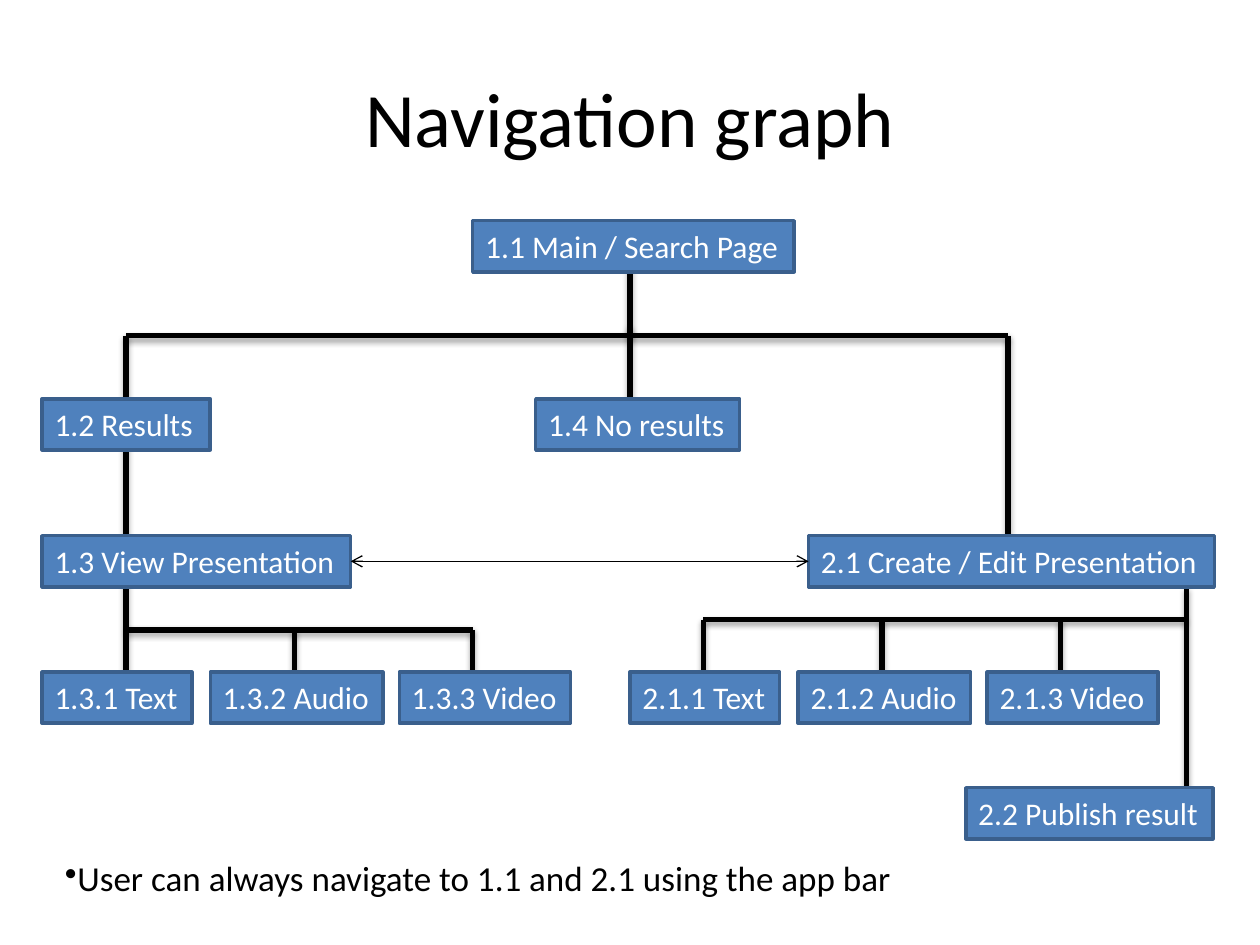
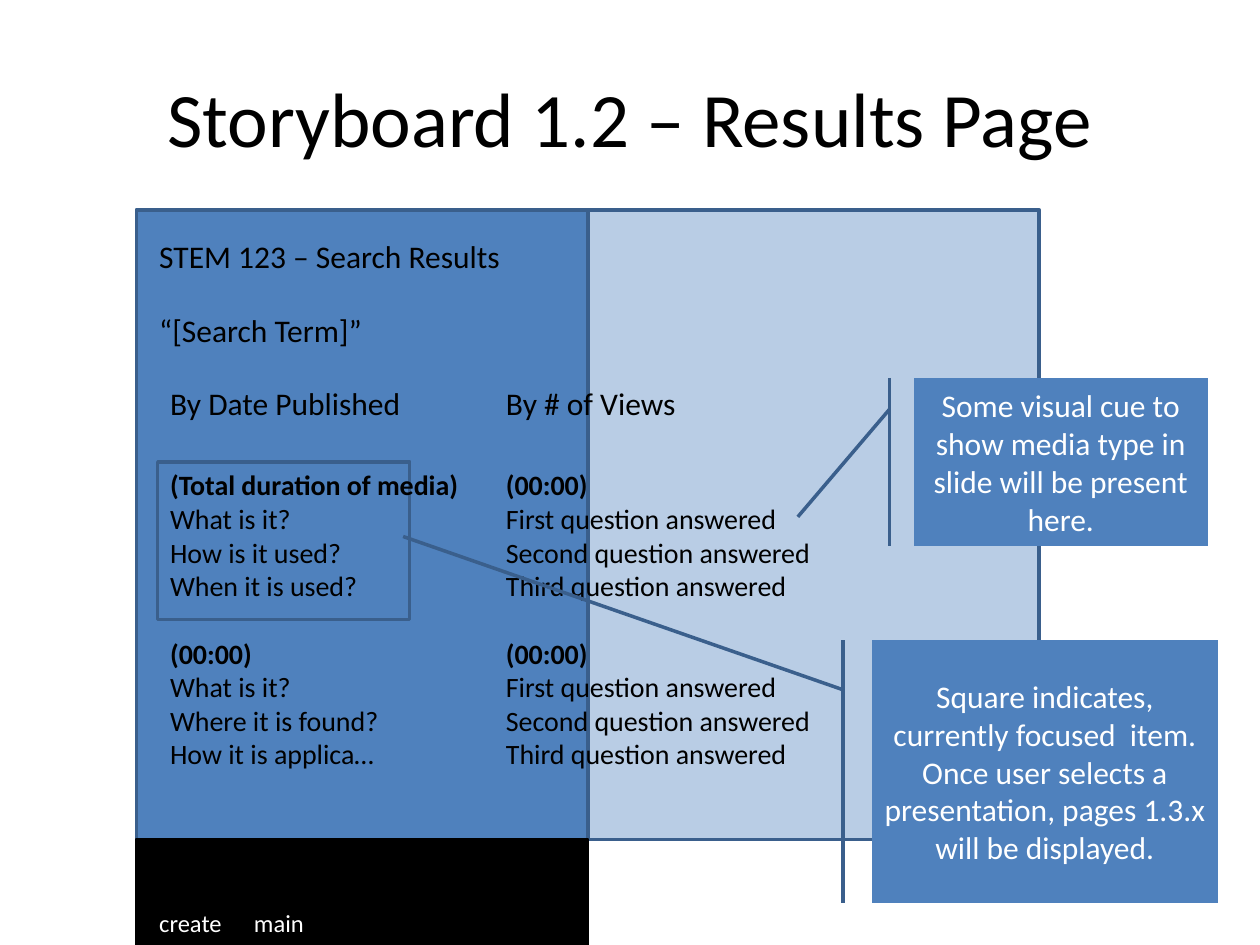
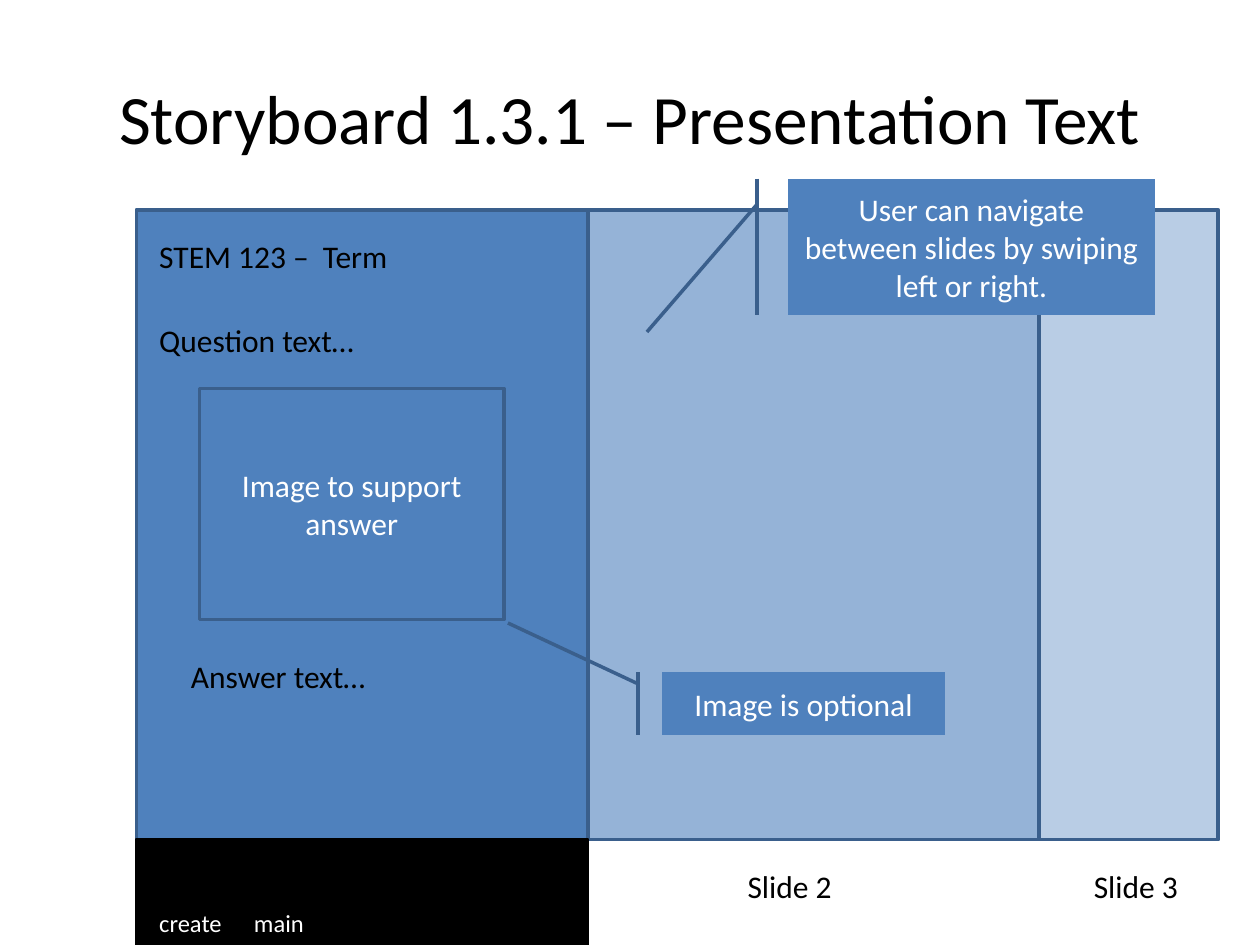
from lxml import etree
from pptx import Presentation
from pptx.dml.color import RGBColor
from pptx.enum.shapes import MSO_CONNECTOR, MSO_SHAPE
from pptx.enum.text import MSO_ANCHOR, PP_ALIGN
from pptx.oxml.ns import qn
from pptx.util import Cm, Pt

RECT = MSO_SHAPE.RECTANGLE
CALL = MSO_SHAPE.LINE_CALLOUT_1_ACCENT_BAR
LINE = MSO_CONNECTOR.STRAIGHT
LEFT, MID = PP_ALIGN.LEFT, PP_ALIGN.CENTER
TOP, HALF = MSO_ANCHOR.TOP, MSO_ANCHOR.MIDDLE

BLACK = RGBColor(0x00, 0x00, 0x00)
WHITE = RGBColor(0xFF, 0xFF, 0xFF)
BLUE = RGBColor(0x4F, 0x81, 0xBD)
EDGE = RGBColor(0x3A, 0x5F, 0x8C)
SOFT = RGBColor(0x95, 0xB3, 0xD7)
PALE = RGBColor(0xB9, 0xCD, 0xE5)
FONT = "Calibri"
ROW = 1.03  # height of a one-line label


def write(shape, text, size=18, ink=BLACK, align=LEFT, anchor=TOP, wrap=True):
    """Fill a shape with lines; the first of several lines is bold."""
    frame = shape.text_frame
    frame.word_wrap = wrap
    frame.vertical_anchor = anchor
    lines = text.split("\n")
    for i, line in enumerate(lines):
        para = frame.paragraphs[0] if i == 0 else frame.add_paragraph()
        para.text = line
        para.alignment = align
        para.font.name = FONT
        para.font.size = Pt(size)
        para.font.bold = len(lines) > 1 and i == 0
        para.font.color.rgb = ink


def draw(slide, place, fill=BLUE, edge=EDGE, kind=RECT):
    """Add a preset shape at (left, top, width, height) in cm."""
    shape = slide.shapes.add_shape(kind, *map(Cm, place))
    shape.shadow.inherit = False
    if fill is None:
        shape.fill.background()
    else:
        shape.fill.solid()
        shape.fill.fore_color.rgb = fill
    shape.line.color.rgb = edge
    shape.line.width = Pt(2)
    return shape


deck = Presentation()
deck.slide_width, deck.slide_height = Cm(25.4), Cm(19.05)

# Slides and titles
pages = []
for title, size in [("Navigation graph", 44),
                    ("Storyboard 1.2 – Results Page", 44),
                    ("Storyboard 1.3.1 – Presentation Text", 39.6)]:
    page = deck.slides.add_slide(deck.slide_layouts[6])
    head = page.shapes.add_textbox(Cm(1.27), Cm(0.76), Cm(22.86), Cm(3.18))
    write(head, title, size, align=MID, anchor=HALF)
    pages.append(page)
graph, *boards = pages

# Graph: thick branches with a soft shadow
branches = [
    (2.54, 8.68, 2.54, 11.22), (20.32, 6.77, 20.32, 11.01),
    (12.7, 6.56, 12.7, 8.04), (2.54, 6.77, 2.54, 8.26),
    (12.7, 5.08, 12.7, 6.77), (2.54, 6.77, 20.32, 6.77),
    (2.54, 12.7, 9.53, 12.7), (2.54, 11.43, 2.54, 13.97),
    (14.18, 12.49, 23.92, 12.49), (23.92, 11.85, 23.92, 16.51),
]
branches += [(x, 12.7, x, 14.18) for x in (5.93, 9.53)]
branches += [(x, 12.49, x, 13.97) for x in (14.18, 17.78, 21.38)]
for ends in branches:
    branch = graph.shapes.add_connector(LINE, *map(Cm, ends))
    branch.line.color.rgb = BLACK
    branch.line.width = Pt(3)
    effect = etree.SubElement(branch._element.spPr, qn("a:effectLst"))
    shade = etree.SubElement(effect, qn("a:outerShdw"), blurRad="40000",
                             dist="23000", dir="5400000", rotWithShape="0")
    tone = etree.SubElement(shade, qn("a:srgbClr"), val="000000")
    etree.SubElement(tone, qn("a:alpha"), val="35000")

# Graph: page nodes, with the same media row under 1.3 and 2.1
nodes = [
    ("1.1 Main / Search Page", 9.53, 4.45, 6.48),
    ("1.2 Results", 0.85, 8.04, 3.39),
    ("1.4 No results", 10.8, 8.04, 4.11),
    ("1.3 View Presentation", 0.85, 10.8, 6.22),
    ("2.1 Create / Edit Presentation", 16.3, 10.8, 8.18),
    ("2.2 Publish result", 19.47, 15.88, 4.98),
]
for group, start in [("1.3", 0.85), ("2.1", 12.7)]:
    for name, step, w in [(".1 Text", 0, 3.02), (".2 Audio", 3.39, 3.48),
                          (".3 Video", 7.2, 3.45)]:
        nodes.append((group + name, start + step, 13.55, w))
made = {}
for text, x, y, w in nodes:
    node = draw(graph, (x, y, w, ROW))
    write(node, text, ink=WHITE, wrap=False)
    made[text[:3] if text[3] == " " else text[:5]] = node

# Graph: two-way arrow between viewing and editing
arrow = graph.shapes.add_connector(LINE, 0, 0, 0, 0)
arrow.begin_connect(made["1.3"], 3)
arrow.end_connect(made["2.1"], 1)
arrow.line.color.rgb = BLACK
arrow.line.width = Pt(0.75)
for tag in ("a:headEnd", "a:tailEnd"):
    etree.SubElement(arrow.line._get_or_add_ln(), qn(tag), type="arrow")
etree.SubElement(arrow._element.spPr, qn("a:effectLst"))

# Graph: bulleted remark
remark = graph.shapes.add_textbox(Cm(1.06), Cm(17.15), Cm(18.42), Cm(1.11))
write(remark, "User can always navigate to 1.1 and 2.1 using the app bar", 20)
bullet = etree.Element(qn("a:buChar"), char="•")
remark.text_frame.paragraphs[0]._p.get_or_add_pPr().insert(0, bullet)

# Storyboards: panels (left, width, fill) beside the first screen
panels = [
    [(11.85, 9.1, PALE)],
    [(11.85, 9.1, SOFT), (20.96, 3.6, PALE)],
]

# Storyboards: inner frames (text, place, fill)
frames = [
    [("", (3.18, 9.31, 5.08, 3.18), None)],
    [("Image to support answer", (4.02, 7.83, 6.14, 4.66), BLUE)],
]

# Storyboards: labels (text, left, top, width, wrap)
answers = ("(00:00)\nFirst question answered\nSecond question answered\n"
           "Third question answered")
labels = [
    [("STEM 123 – Search Results", 2.96, 4.66, 7.47, False),
     ("“[Search Term]”", 2.96, 6.14, 19.9, True),
     ("By Date Published", 3.18, 7.62, 5.21, False),
     ("By # of Views", 9.95, 7.62, 3.96, False),
     ("(Total duration of media)\nWhat is it?\nHow is it used?\n"
      "When it is used?", 3.18, 9.31, 6.4, False),
     ("(00:00)\nWhat is it?\nWhere it is found?\nHow it is applica…",
      3.18, 12.7, 4.78, False),
     (answers, 9.95, 9.31, 6.73, False),
     (answers, 9.95, 12.7, 6.73, False)],
    [("STEM 123 –  Term", 2.96, 4.66, 5.16, False),
     ("Question text…", 2.96, 6.35, 8.26, True),
     ("Answer text…", 3.6, 13.12, 4.09, False),
     ("Slide 2", 14.82, 17.36, 2.24, False),
     ("Slide 3", 21.8, 17.36, 2.24, False)],
]

# Storyboards: callouts (text, place, pointer tip as share of height and width)
calls = [
    [("Square indicates, currently focused  item. Once user selects a "
      "presentation, pages 1.3.x will be displayed.",
      (17.57, 12.91, 6.99, 5.29), -0.396, -1.351),
     ("Some visual cue to show media type in slide will be present here.",
      (18.42, 7.62, 5.93, 3.39), 0.826, -0.394)],
    [("User can navigate between slides by swiping left or right.",
      (15.88, 3.6, 7.41, 2.75), 1.125, -0.383),
     ("Image is optional", (13.34, 13.55, 5.72, 1.27), -0.78, -0.542)],
]

for i, board in enumerate(boards):
    # Screen, side panels and app bar
    for x, w, fill in [(2.75, 9.1, BLUE)] + panels[i]:
        draw(board, (x, 4.23, w, 12.7), fill)
    draw(board, (2.75, 16.93, 9.1, 2.12), BLACK, BLACK)
    for text, x, w in [("create", 2.96, 1.78), ("main", 4.87, 1.57)]:
        item = board.shapes.add_textbox(Cm(x), Cm(18.19), Cm(w), Cm(0.86))
        write(item, text, 14, WHITE, wrap=False)

    # Page content
    for text, place, fill in frames[i]:
        frame = draw(board, place, fill)
        if text:
            write(frame, text, ink=WHITE, align=MID, anchor=HALF)
    for text, x, y, w, wrap in labels[i]:
        size, h = (16, 3) if "\n" in text else (18, ROW)
        label = board.shapes.add_textbox(Cm(x), Cm(y), Cm(w), Cm(h))
        write(label, text, size, wrap=wrap)

    # Remarks
    for text, place, down, across in calls[i]:
        call = draw(board, place, kind=CALL)
        for k, share in enumerate((0.188, -0.083, down, across)):
            call.adjustments[k] = share
        write(call, text, ink=WHITE, align=MID, anchor=HALF)

deck.save("out.pptx")
